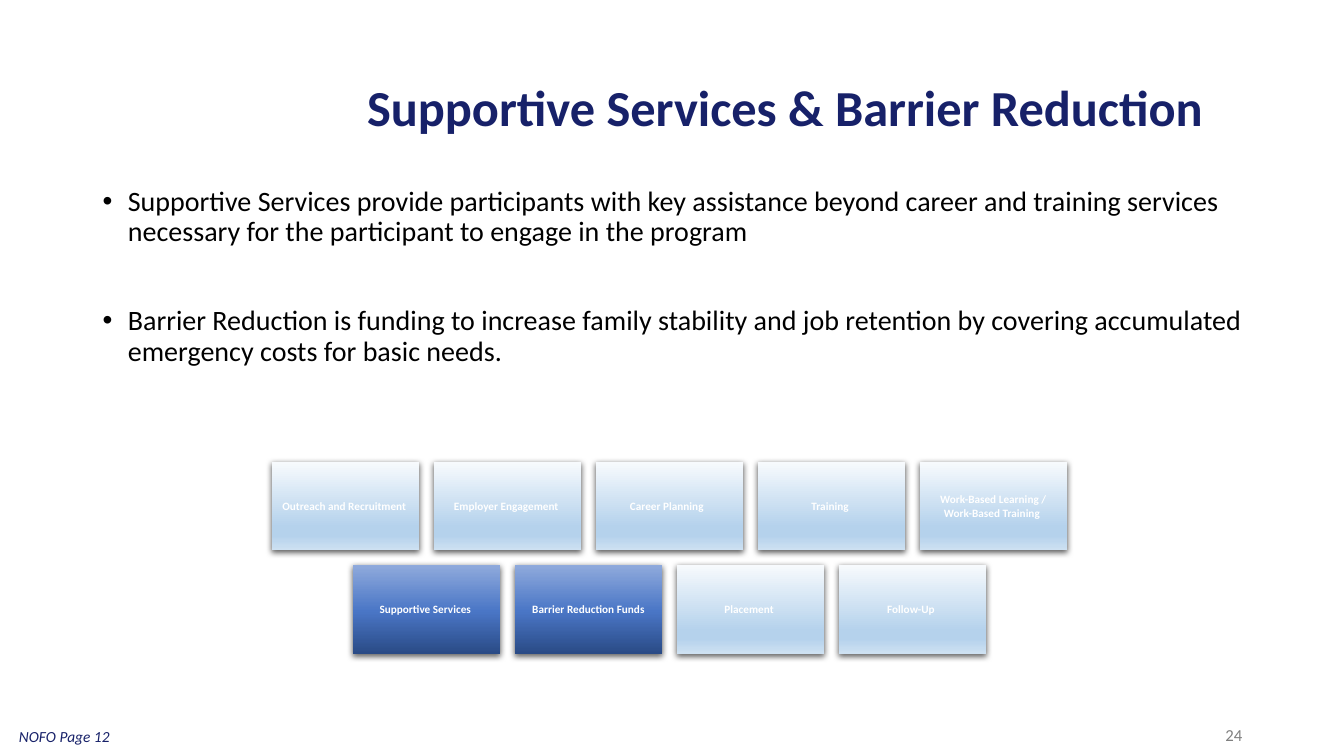
from pptx import Presentation
from pptx.dml.color import RGBColor
from pptx.enum.shapes import MSO_SHAPE
from pptx.enum.text import MSO_ANCHOR, PP_ALIGN
from pptx.oxml import parse_xml
from pptx.oxml.ns import nsdecls, qn
from pptx.util import Inches, Pt

COLORS = {
    "navy": "172169", "black": "000000", "gray": "808080", "white": "FFFFFF",
    "pale_top": "F7FAFD", "pale_mid": "B5D2EC", "pale_base": "CEE1F2",
    "blue_top": "8FAADC", "blue_mid": "4A76C6", "blue_base": "2A4B86",
}
PALE = [(0, "pale_top"), (74, "pale_mid"), (83, "pale_mid"), (100, "pale_base")]
BLUE = [(0, "blue_top"), (52, "blue_mid"), (100, "blue_base")]
CURRENT_STEPS = {"Supportive Services ", "Barrier Reduction Funds"}
STEP_ROWS = [
    ["Outreach and Recruitment ", "Employer Engagement ", "Career Planning  ",
     "Training ", "Work-Based Learning /\nWork-Based Training "],
    ["Supportive Services ", "Barrier Reduction Funds", "Placement ", "Follow-Up "],
]
DEFINITIONS = [
    "Supportive Services provide participants with key assistance beyond career "
    "and training services necessary for the participant to engage in the program",
    "Barrier Reduction is funding to increase family stability and job retention "
    "by covering accumulated emergency costs for basic needs.",
]
STEP_WIDTH, STEP_HEIGHT, STEP_GAP = 1.46, 0.88, 0.146
STEPS_CENTER, STEPS_TOP = 6.64, 4.58


def style(paragraph, size, color, align=PP_ALIGN.LEFT, bold=False, italic=False):
    """Set the alignment and font of a paragraph."""
    paragraph.alignment = align
    font = paragraph.font
    font.name, font.size = "Calibri", Pt(size)
    font.bold, font.italic = bold, italic
    font.color.rgb = RGBColor.from_string(COLORS[color])


def add_title(slide, text):
    """Place the slide title."""
    title = slide.shapes.title
    title.left, title.top = Inches(2.59), Inches(0.79)
    title.width, title.height = Inches(10.51), Inches(0.61)
    frame = title.text_frame
    frame.text = text
    frame.vertical_anchor = MSO_ANCHOR.MIDDLE
    frame.paragraphs[0].line_spacing = 0.9
    style(frame.paragraphs[0], 36, "navy", PP_ALIGN.CENTER, bold=True)


def add_text(slide, box, text):
    """Add a wrapping text box and return its text frame."""
    frame = slide.shapes.add_textbox(*map(Inches, box)).text_frame
    frame.word_wrap = True
    frame.text = text
    return frame


def add_bullets(slide, box, items):
    """Add a bulleted list with wide gaps between its items."""
    frame = add_text(slide, box, "\n".join(items))
    for index, paragraph in enumerate(frame.paragraphs):
        properties = paragraph._p.get_or_add_pPr()
        properties.set("marL", str(Inches(0.25)))
        properties.set("indent", str(Inches(-0.25)))
        properties.append(parse_xml(f'<a:buFont {nsdecls("a")} typeface="Arial"/>'))
        properties.append(parse_xml(f'<a:buChar {nsdecls("a")} char="•"/>'))
        paragraph.line_spacing = 0.9
        paragraph.space_before = Pt(42 if index else 0)
        style(paragraph, 20, "black")


def fill_gradient(shape, stops):
    """Fill a shape with a gradient running from top to bottom."""
    shape.fill.gradient()
    shape.fill.gradient_angle = 270
    stop_list = shape._element.spPr.find(".//" + qn("a:gsLst"))
    stop_list.clear()
    for position, color in stops:
        stop_list.append(parse_xml(
            f'<a:gs {nsdecls("a")} pos="{position * 1000}">'
            f'<a:srgbClr val="{COLORS[color]}"/></a:gs>'))


def add_shadow(shape):
    """Give a shape a soft shadow below it."""
    shape.shadow.inherit = False
    shape._element.spPr.find(qn("a:effectLst")).append(parse_xml(
        f'<a:outerShdw {nsdecls("a")} blurRad="{Pt(4.5)}" dist="{Pt(1.5)}" '
        f'dir="5400000" algn="ctr" rotWithShape="0">'
        f'<a:srgbClr val="{COLORS["black"]}"><a:alpha val="63000"/></a:srgbClr>'
        f'</a:outerShdw>'))


def add_step(slide, left, top, label):
    """Add one step of the program, highlighted when it is current."""
    step = slide.shapes.add_shape(MSO_SHAPE.RECTANGLE, Inches(left), Inches(top),
                                  Inches(STEP_WIDTH), Inches(STEP_HEIGHT))
    fill_gradient(step, BLUE if label in CURRENT_STEPS else PALE)
    step.line.fill.background()
    add_shadow(step)
    frame = step.text_frame
    frame.margin_left = frame.margin_right = Inches(0.03)
    frame.margin_top = frame.margin_bottom = Inches(0.03)
    frame.word_wrap = True
    frame.vertical_anchor = MSO_ANCHOR.MIDDLE
    frame.text = label
    for paragraph in frame.paragraphs:
        style(paragraph, 8, "white", PP_ALIGN.CENTER, bold=True)


def add_steps(slide):
    """Add the centred rows of program steps."""
    for row, labels in enumerate(STEP_ROWS):
        row_width = len(labels) * (STEP_WIDTH + STEP_GAP) - STEP_GAP
        left = STEPS_CENTER - row_width / 2
        top = STEPS_TOP + row * (STEP_HEIGHT + STEP_GAP)
        for column, label in enumerate(labels):
            add_step(slide, left + column * (STEP_WIDTH + STEP_GAP), top, label)


def main():
    """Build and save the slide."""
    deck = Presentation()
    deck.slide_width, deck.slide_height = Inches(13.33), Inches(7.5)
    slide = deck.slides.add_slide(deck.slide_layouts[5])
    add_title(slide, "Supportive Services & Barrier Reduction ")
    add_bullets(slide, (0.92, 1.81, 11.5, 2.2), DEFINITIONS)
    page_number = add_text(slide, (9.42, 7.09, 3, 0.4), "24")
    page_number.vertical_anchor = MSO_ANCHOR.MIDDLE
    style(page_number.paragraphs[0], 12, "gray", PP_ALIGN.RIGHT)
    add_steps(slide)
    reference = add_text(slide, (0.09, 7.16, 2.33, 0.29), "NOFO Page 12")
    style(reference.paragraphs[0], 11, "navy", italic=True)
    deck.save("out.pptx")


if __name__ == "__main__":
    main()
